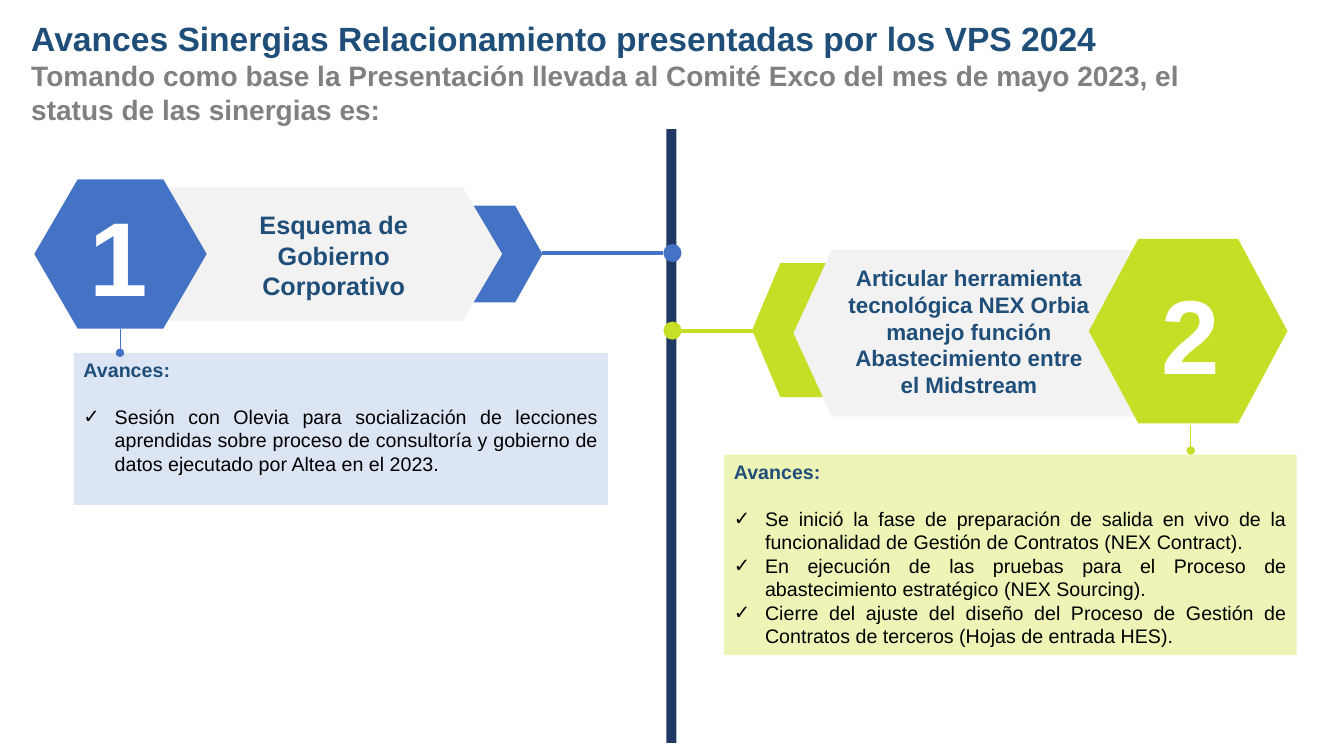
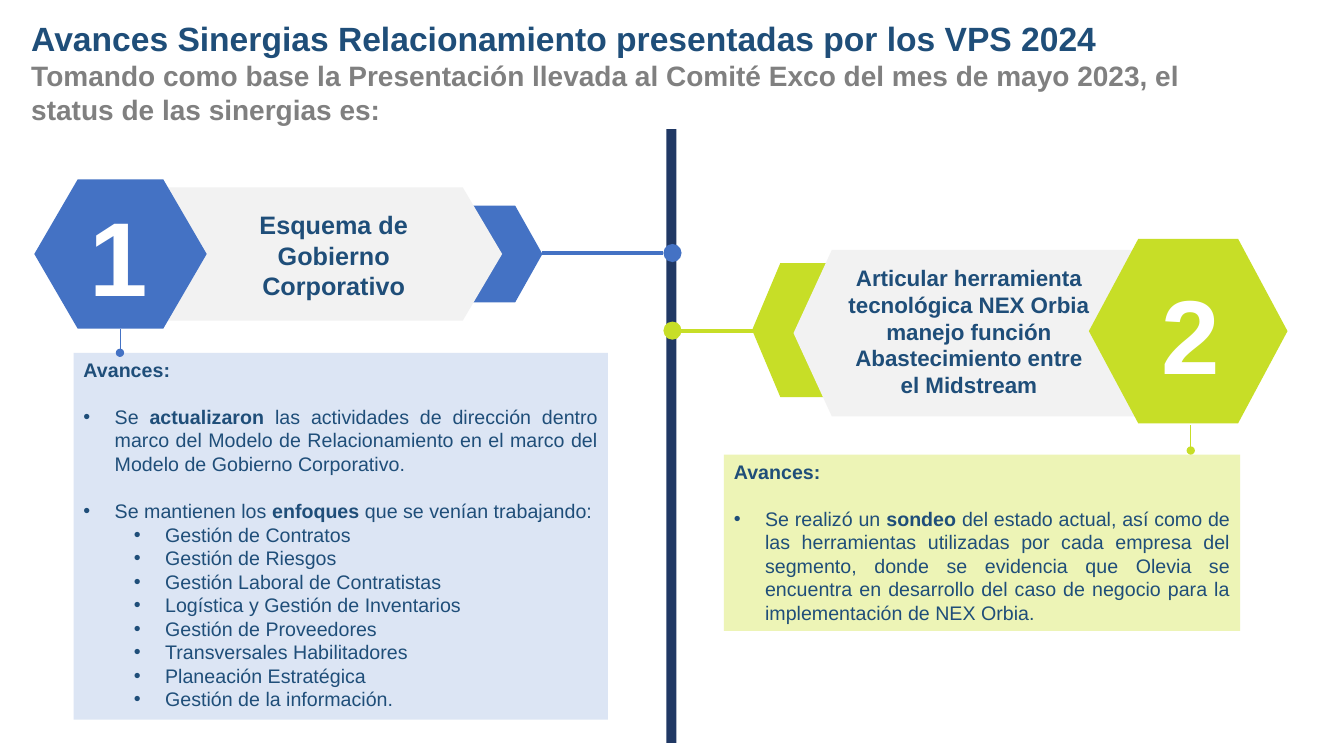
import pptx
import pptx.dml.color
import pptx.enum.shapes
import pptx.enum.text
import pptx.oxml.ns
import pptx.util
import lxml.etree
from dataclasses import dataclass

Inches = pptx.util.Inches
Pt = pptx.util.Pt
Shape = pptx.enum.shapes.MSO_SHAPE
Align = pptx.enum.text.PP_ALIGN
Anchor = pptx.enum.text.MSO_ANCHOR


@dataclass(frozen=True)
class Theme:
    font: str = "Arial"
    ink: str = "1F4E79"
    black: str = "000000"
    gray: str = "808080"
    white: str = "FFFFFF"
    panel: str = "F2F2F2"
    spine: str = "203864"
    blue: str = "4472C4"
    pale_blue: str = "DCE5F4"
    lime: str = "C7DE27"
    pale_lime: str = "EDF4B6"
    title: int = 24
    sub: int = 20
    digit: int = 75
    body: int = 14
    pitch: float = 1.2  # line height per type size


T = Theme()

# Content: *stars* mark bold; each item is text, level, blank line after
TITLE = "Avances Sinergias Relacionamiento presentadas por los VPS 2024"
SUB = ("Tomando como base la Presentación llevada al Comité Exco del mes "
       "de mayo 2023, el status de las sinergias es:")
HEADS = [
    ["Esquema de", "Gobierno", "Corporativo"],
    ["Articular herramienta", "tecnológica NEX Orbia", "manejo función",
     "Abastecimiento entre", "el Midstream"],
]
TOPICS = ["Gestión de Contratos", "Gestión de Riesgos",
          "Gestión Laboral de Contratistas",
          "Logística y Gestión de Inventarios", "Gestión de Proveedores",
          "Transversales Habilitadores", "Planeación Estratégica",
          "Gestión de la información."]
SLIDES = [
    dict(mark="✓", color=T.black, boxes=[
        dict(size=(5.3, 1.51), items=[
            ("Sesión con Olevia para socialización de lecciones aprendidas "
             "sobre proceso de consultoría y gobierno de datos ejecutado por "
             "Altea en el 2023.", 0, False)]),
        dict(size=(5.68, 1.99), items=[
            ("Se inició la fase de preparación de salida en vivo de la "
             "funcionalidad de Gestión de Contratos (NEX Contract).", 0, False),
            ("En ejecución de las pruebas para el Proceso de abastecimiento "
             "estratégico (NEX Sourcing).", 0, False),
            ("Cierre del ajuste del diseño del Proceso de Gestión de "
             "Contratos de terceros (Hojas de entrada HES).", 0, False)]),
    ]),
    dict(mark="•", color=T.ink, boxes=[
        dict(size=(5.3, 3.64), items=[
            ("Se *actualizaron* las actividades de dirección dentro marco del "
             "Modelo de Relacionamiento en el marco del Modelo de Gobierno "
             "Corporativo.", 0, True),
            ("Se mantienen los *enfoques* que se venían trabajando:", 0, False),
            *[(topic, 1, False) for topic in TOPICS]]),
        dict(size=(5.12, 1.75), items=[
            ("Se realizó un *sondeo* del estado actual, así como de las "
             "herramientas utilizadas por cada empresa del segmento, donde se "
             "evidencia que Olevia se encuentra en desarrollo del caso de "
             "negocio para la implementación de NEX Orbia.", 0, False)]),
    ]),
]

# Places of the two sides; arrows are flat end, neck, tip, top, bottom
SIDES = [
    dict(color=T.blue, pale=T.pale_blue, arrow=(4.45, 5.11, 5.38, 2.04, 3),
         panel=(1.19, 4.59, 4.98, 1.86, 3.18), hexa=(0.34, 2.05, 1.78, 3.26, 0.43),
         digit=(0.51, 1.84), head=(1.7, 2.02, 3.22, 1.01), size=18,
         link=(5.38, 6.58), node=2.51, box=(0.73, 3.5), pin=(1.19, 3.26, 3.5)),
    dict(color=T.lime, pale=T.pale_lime, arrow=(8.39, 7.74, 7.46, 2.61, 3.94),
         panel=(11.66, 8.25, 7.87, 2.48, 4.13), hexa=(10.8, 12.77, 2.37, 4.2, 0.49),
         digit=(11.14, 2.62), head=(8.14, 2.55, 2.94, 1.45), size=16,
         link=(6.67, 7.52), node=3.28, box=(7.18, 4.51), pin=(11.81, 4.22, 4.47)),
]


def rgb(code):
    return pptx.dml.color.RGBColor.from_string(code)


def tag(parent, name, **attrs):
    node = lxml.etree.SubElement(parent, pptx.oxml.ns.qn(name))
    for key, value in attrs.items():
        node.set(key, value)
    return node


def write(frame, text, *, size, color=T.ink, bold=True, align=Align.LEFT,
          mark=None, level=0, gap=False):
    """Add one paragraph to the frame, filling the empty first one."""
    para = frame.paragraphs[0]
    if para.runs:
        para = frame.add_paragraph()
    para.alignment = align
    para.level = level
    para.line_spacing = Pt(size * T.pitch)
    para.space_before = Pt(0)
    para.space_after = Pt(size * T.pitch if gap else 0)
    if mark:
        props = para._p.get_or_add_pPr()
        props.set("marL", str(Inches(0.31 + 0.5 * level)))
        props.set("indent", str(-Inches(0.31)))
        tag(props, "a:buFont", typeface=T.font)
        tag(props, "a:buChar", char=mark)
    for i, part in enumerate(text.split("*")):
        if part:
            run = para.add_run()
            run.text = part
            run.font.name = T.font
            run.font.size = Pt(size)
            run.font.bold = bold or i % 2 == 1
            run.font.color.rgb = rgb(color)


def setup(frame, anchor):
    frame.word_wrap = True
    frame.auto_size = pptx.enum.text.MSO_AUTO_SIZE.NONE
    frame.vertical_anchor = anchor
    frame.margin_left = frame.margin_right = Inches(0.1)
    frame.margin_top = frame.margin_bottom = Inches(0.05)
    return frame


def label(slide, place, anchor):
    box = slide.shapes.add_textbox(*map(Inches, place))
    return setup(box.text_frame, anchor)


def paint(shape, color):
    shape.shadow.inherit = False
    shape.fill.solid()
    shape.fill.fore_color.rgb = rgb(color)
    shape.line.fill.background()
    return shape


def block(slide, kind, place, color):
    return paint(slide.shapes.add_shape(kind, *map(Inches, place)), color)


def poly(slide, points, color):
    spots = [(Inches(x), Inches(y)) for x, y in points]
    form = slide.shapes.build_freeform(*spots[0])
    form.add_line_segments(spots[1:], close=True)
    paint(form.convert_to_shape(), color)


def arrow(slide, flat, neck, tip, top, low, color):
    poly(slide, [(flat, top), (neck, top), (tip, (top + low) / 2),
                 (neck, low), (flat, low)], color)


def hexa(slide, left, right, top, low, cut, color):
    mid = (top + low) / 2
    poly(slide, [(left, mid), (left + cut, top), (right - cut, top),
                 (right, mid), (right - cut, low), (left + cut, low)], color)


def link(slide, start, end, color, width, dot=False):
    line = slide.shapes.add_connector(
        pptx.enum.shapes.MSO_CONNECTOR.STRAIGHT, *map(Inches, start + end))
    line.line.color.rgb = rgb(color)
    line.line.width = Pt(width)
    if dot:
        tag(line.line._get_or_add_ln(), "a:tailEnd", type="oval")
    tag(line._element.spPr, "a:effectLst")


def header(slide):
    title = slide.shapes.title
    title.left, title.top, title.width, title.height = map(
        Inches, (0.21, 0.13, 12.48, 1.18))
    frame = setup(title.text_frame, Anchor.TOP)
    write(frame, TITLE, size=T.title)
    write(frame, SUB, size=T.sub, color=T.gray)


def side(slide, spot, number, head, box, mark, color):
    tint = spot["color"]
    # Banner
    arrow(slide, *spot["arrow"], tint)
    arrow(slide, *spot["panel"], T.panel)
    hexa(slide, *spot["hexa"], tint)
    frame = label(slide, (*spot["digit"], 1.33, 1.36), Anchor.MIDDLE)
    write(frame, str(number), size=T.digit, color=T.white, align=Align.CENTER)
    frame = label(slide, spot["head"], Anchor.BOTTOM)
    for row in head:
        write(frame, row, size=spot["size"], align=Align.CENTER)
    # Link to the spine
    y = spot["node"]
    start, end = spot["link"]
    link(slide, (start, y), (end, y), tint, 3)
    block(slide, Shape.OVAL, (6.58, y - 0.09, 0.18, 0.18), tint)
    # Progress box
    card = block(slide, Shape.RECTANGLE, (*spot["box"], *box["size"]), spot["pale"])
    frame = setup(card.text_frame, Anchor.TOP)
    write(frame, "Avances:", size=T.body, align=Align.JUSTIFY, gap=True)
    for text, level, gap in box["items"]:
        write(frame, text, size=T.body, color=color, bold=False,
              align=Align.JUSTIFY, mark=mark, level=level, gap=gap)
    x, top, low = spot["pin"]
    link(slide, (x, top), (x, low), tint, 0.5, dot=True)


def main():
    deck = pptx.Presentation()
    deck.slide_width, deck.slide_height = Inches(13.33), Inches(7.5)
    for page in SLIDES:
        slide = deck.slides.add_slide(deck.slide_layouts[5])
        header(slide)
        block(slide, Shape.RECTANGLE, (6.61, 1.28, 0.1, 6.09), T.spine)
        for i, spot in enumerate(SIDES):
            side(slide, spot, i + 1, HEADS[i], page["boxes"][i],
                 page["mark"], page["color"])
    deck.save("out.pptx")


if __name__ == "__main__":
    main()
